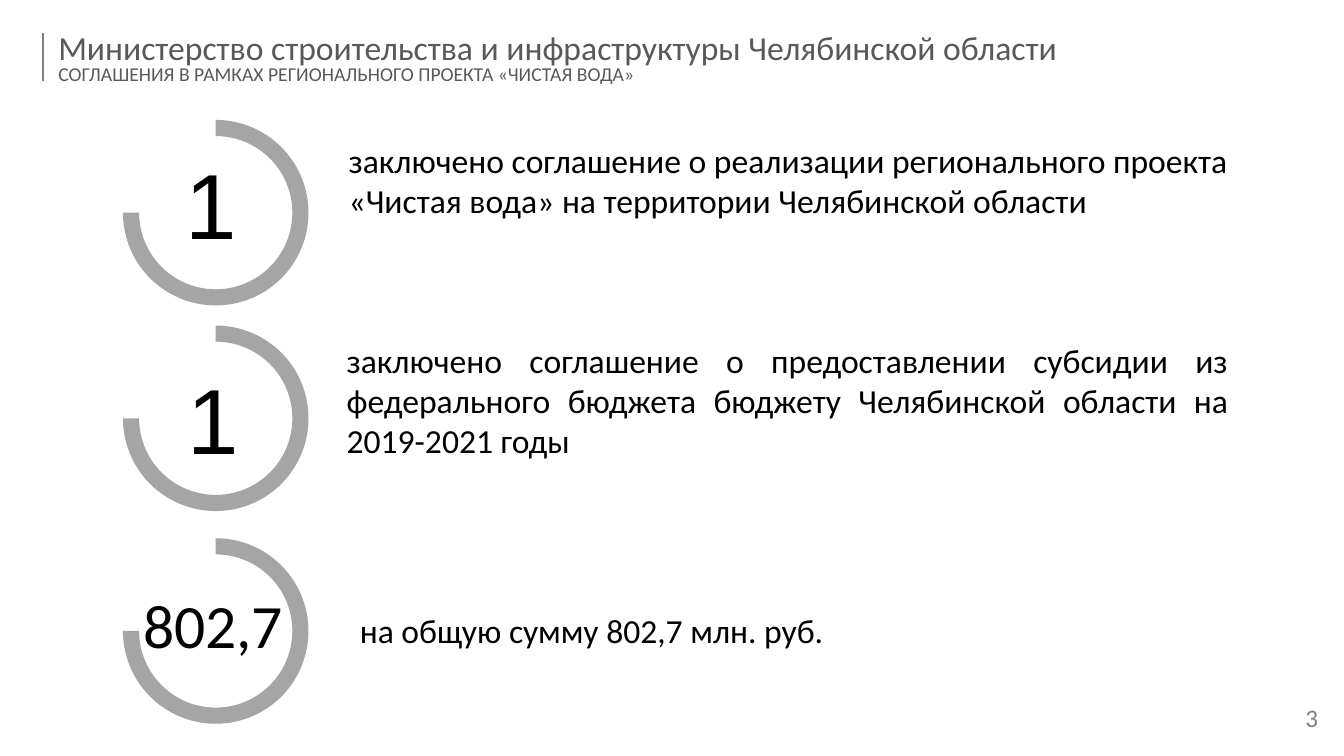
from lxml.etree import SubElement
from pptx import Presentation
from pptx.dml.color import RGBColor
from pptx.enum.shapes import MSO_CONNECTOR, MSO_SHAPE
from pptx.enum.text import MSO_ANCHOR, PP_ALIGN
from pptx.oxml.ns import qn
from pptx.util import Inches, Pt

RING_SIZE = 1.84
RING_THICKNESS = 0.16


def color(hex_string):
    return RGBColor.from_string(hex_string)


def write_text(paragraph, text, size=24, font="Calibri", fill="000000",
               align=PP_ALIGN.LEFT, spacing=1.0):
    paragraph.alignment = align
    paragraph.line_spacing = spacing
    run = paragraph.add_run()
    run.text = text
    run.font.size = Pt(size)
    run.font.name = font
    run.font.color.rgb = color(fill)


class SlideBuilder:
    gray = "808080"
    title_color = "595959"
    ring_color = "A5A5A5"

    def __init__(self, slide):
        self.slide = slide

    def text_box(self, left, top, width, height, *lines, anchor=MSO_ANCHOR.TOP, **text_format):
        """Add one paragraph per (text, size) pair in lines."""
        box = self.slide.shapes.add_textbox(
            Inches(left), Inches(top), Inches(width), Inches(height))
        frame = box.text_frame
        frame.word_wrap = True
        frame.vertical_anchor = anchor
        for index, (text, size) in enumerate(lines):
            paragraph = frame.add_paragraph() if index else frame.paragraphs[0]
            write_text(paragraph, text, size=size, **text_format)

    def ring(self, left, top):
        """Add a three-quarter ring, open at the upper left."""
        shape = self.slide.shapes.add_shape(
            MSO_SHAPE.BLOCK_ARC, Inches(left), Inches(top),
            Inches(RING_SIZE), Inches(RING_SIZE))
        # Angles are in 60000ths of a degree, scaled by 100000
        shape.adjustments[0] = 270 * 0.6
        shape.adjustments[1] = 180 * 0.6
        shape.adjustments[2] = RING_THICKNESS / RING_SIZE
        shape.shadow.inherit = False
        shape.fill.solid()
        shape.fill.fore_color.rgb = color(self.ring_color)
        shape.line.fill.background()

    def vertical_line(self, left, top, bottom):
        line = self.slide.shapes.add_connector(
            MSO_CONNECTOR.STRAIGHT, Inches(left), Inches(top), Inches(left), Inches(bottom))
        line.line.color.rgb = color(self.gray)
        line.line.width = Pt(1.5)
        SubElement(line._element.spPr, qn("a:effectLst"))


def main():
    presentation = Presentation()
    presentation.slide_width = Inches(13.33)
    presentation.slide_height = Inches(7.5)
    builder = SlideBuilder(presentation.slides.add_slide(presentation.slide_layouts[6]))

    builder.vertical_line(0.43, 0.33, 0.8)
    builder.text_box(
        0.48, 0.26, 12.4, 0.67,
        ("Министерство строительства и инфраструктуры Челябинской области", 24),
        ("СОГЛАШЕНИЯ В РАМКАХ РЕГИОНАЛЬНОГО ПРОЕКТА «ЧИСТАЯ ВОДА»", 14),
        anchor=MSO_ANCHOR.MIDDLE, fill=builder.title_color, spacing=0.8)

    # Ring top, number, its size, font and box, then the statement, its alignment and box
    agreements = [
        (1.19, "1", 66, "Arial", (1.32, 1.4, 1.54, 1.21),
         "заключено соглашение о реализации регионального проекта "
         "«Чистая вода» на территории Челябинской области",
         PP_ALIGN.LEFT, (3.36, 1.34, 9.23, 0.91)),
        (3.23, "1", 66, "Arial", (1.34, 3.54, 1.54, 1.21),
         "заключено соглашение о предоставлении субсидии из федерального "
         "бюджета бюджету Челябинской области на 2019-2021 годы",
         PP_ALIGN.JUSTIFY, (3.34, 3.32, 8.94, 1.31)),
        (5.34, "802,7", 44, "Calibri", (1.02, 5.77, 2.19, 0.84),
         "на общую сумму 802,7 млн. руб.",
         PP_ALIGN.JUSTIFY, (3.47, 6, 6.02, 0.5)),
    ]
    for ring_top, number, size, font, number_box, statement, align, statement_box in agreements:
        builder.ring(1.22, ring_top)
        builder.text_box(*number_box, (number, size), anchor=MSO_ANCHOR.MIDDLE,
                         font=font, align=PP_ALIGN.CENTER)
        builder.text_box(*statement_box, (statement, 24), align=align)

    builder.text_box(12.69, 6.9, 0.64, 0.5, ("3", 18), anchor=MSO_ANCHOR.MIDDLE,
                     fill=builder.gray, align=PP_ALIGN.CENTER, spacing=0.8)
    presentation.save("out.pptx")


if __name__ == "__main__":
    main()
